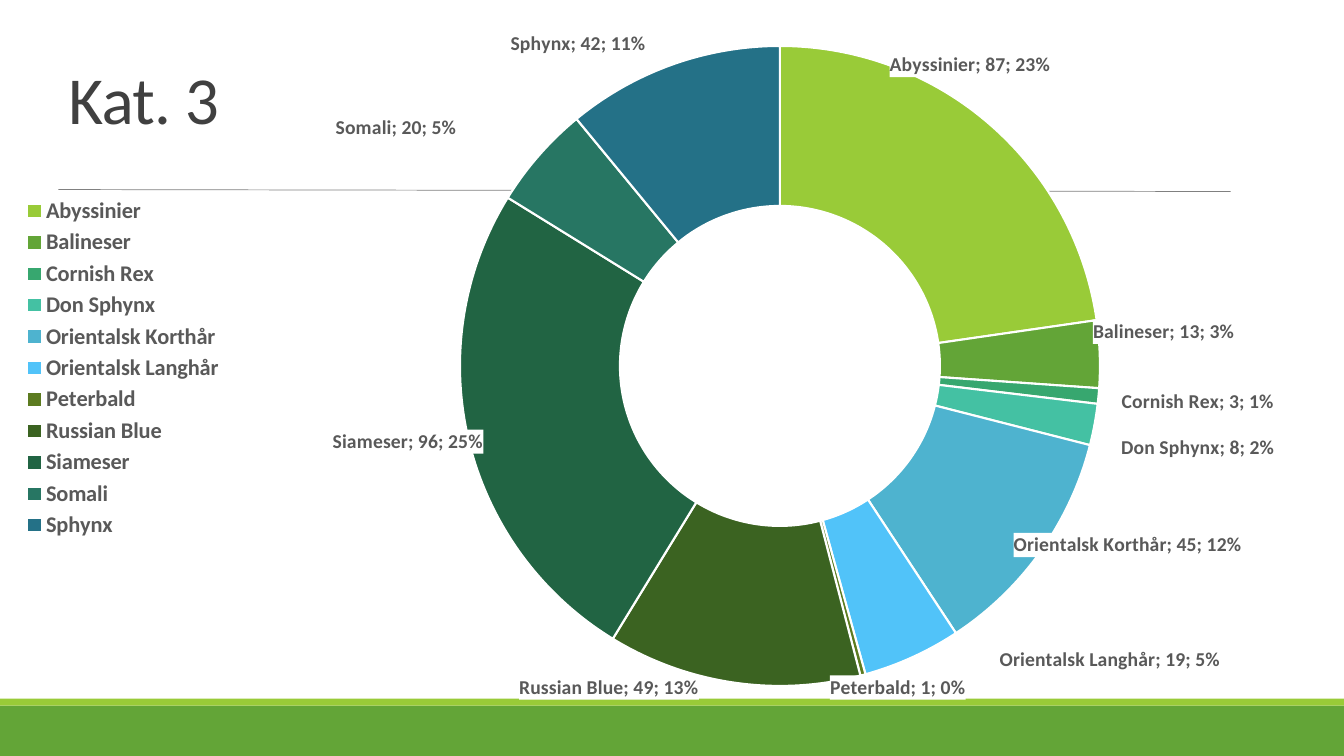
from math import cos, pi, sin

from pptx import Presentation
from pptx.chart.data import CategoryChartData
from pptx.dml.color import RGBColor
from pptx.enum.chart import XL_CHART_TYPE as ChartType, XL_LEGEND_POSITION as LegendPosition
from pptx.enum.shapes import MSO_CONNECTOR as Connector, MSO_SHAPE as Shape
from pptx.enum.text import MSO_ANCHOR as Anchor
from pptx.oxml import parse_xml
from pptx.oxml.ns import nsdecls, qn
from pptx.util import Pt

BREEDS = [
    ("Abyssinier", 87, "99CB38", (693, 46.4)),
    ("Balineser", 13, "63A537", (831.4, 237)),
    ("Cornish Rex", 3, "37A76F", (855.7, 287)),
    ("Don Sphynx", 8, "44C1A3", (855.7, 320)),
    ("Orientalsk Korthår", 45, "4EB3CF", (805.7, 389.3)),
    ("Orientalsk Langhår", 19, "51C3F9", (793, 471.4)),
    ("Peterbald", 1, "5C7B20", (641.4, 492)),
    ("Russian Blue", 49, "3B6321", (435, 492)),
    ("Siameser", 96, "216443", (291.4, 315.5)),
    ("Somali", 20, "277663", (283, 91.4)),
    ("Sphynx", 42, "247187", (413, 31.4)),
]
CHART_BOX = (4.3, 22.3, 955.4, 477.4)
RING_CENTER = (557.2, 261.4)
RING_RADIUS = 228.6
LEGEND_BOX = (13, 138, 150, 250)

LABEL_STYLE = """
<c:spPr><a:solidFill><a:srgbClr val="FFFFFF"/></a:solidFill><a:ln><a:noFill/></a:ln></c:spPr>
<c:txPr><a:bodyPr wrap="none" anchor="ctr"/><a:lstStyle/><a:p><a:pPr>
<a:defRPr sz="1400" b="1"><a:solidFill><a:srgbClr val="595959"/></a:solidFill>
<a:latin typeface="Calibri"/></a:defRPr></a:pPr><a:endParaRPr lang="da-DK"/></a:p></c:txPr>
<c:showLegendKey val="0"/><c:showVal val="1"/><c:showCatName val="1"/><c:showSerName val="0"/>
<c:showPercent val="1"/><c:showBubbleSize val="0"/><c:separator>; </c:separator>"""


def color(value):
    return RGBColor.from_string(value)


def label_xml(index, dx, dy):
    return (f'<c:dLbl><c:idx val="{index}"/><c:layout><c:manualLayout>'
            f'<c:x val="{dx:.4f}"/><c:y val="{dy:.4f}"/>'
            f'</c:manualLayout></c:layout>{LABEL_STYLE}</c:dLbl>')


def place(element, position, box, target=""):
    for layout in element.findall(qn("c:layout")):
        element.remove(layout)
    left, top, width, height = CHART_BOX
    x, y, w, h = box
    fractions = {"x": (x - left) / width, "y": (y - top) / height,
                 "w": w / width, "h": h / height}
    sizes = "".join(f'<c:{key} val="{part:.4f}"/>' for key, part in fractions.items())
    element.insert(position, parse_xml(
        f'<c:layout {nsdecls("c")}><c:manualLayout>{target}<c:xMode val="edge"/>'
        f'<c:yMode val="edge"/>{sizes}</c:manualLayout></c:layout>'))


class Painter:
    font = "Calibri"

    def __init__(self, page):
        self.page = page

    def bar(self, left, top, width, height, fill):
        shape = self.page.shapes.add_shape(
            Shape.RECTANGLE, Pt(left), Pt(top), Pt(width), Pt(height))
        shape.shadow.inherit = False
        shape.fill.solid()
        shape.fill.fore_color.rgb = color(fill)
        shape.line.fill.background()

    def rule(self, x1, y1, x2, y2, stroke, weight):
        line = self.page.shapes.add_connector(
            Connector.STRAIGHT, Pt(x1), Pt(y1), Pt(x2), Pt(y2))
        line.line.color.rgb = color(stroke)
        line.line.width = Pt(weight)
        line._element.spPr.append(parse_xml(f'<a:effectLst {nsdecls("a")}/>'))

    def title(self, text, left, top, width, height):
        box = self.page.shapes.add_textbox(Pt(left), Pt(top), Pt(width), Pt(height))
        frame = box.text_frame
        frame.word_wrap = True
        frame.vertical_anchor = Anchor.MIDDLE
        frame.text = text
        para = frame.paragraphs[0]
        para.line_spacing = 0.85
        span = para.runs[0]
        self.style(span.font, 48, "404040")
        span.font._element.set("spc", "-50")

    def style(self, font, size, fill, bold=False):
        font.name = self.font
        font.size = Pt(size)
        font.bold = bold
        font.color.rgb = color(fill)

    def doughnut(self, breeds):
        data = CategoryChartData()
        data.categories = [name for name, *_ in breeds]
        data.add_series("Series 1", [count for _, count, *_ in breeds])
        chart = self.page.shapes.add_chart(
            ChartType.DOUGHNUT, *map(Pt, CHART_BOX), data).chart
        chart.has_title = False
        self.style(chart.font, 10, "000000")
        chart.has_legend = True
        legend = chart.legend
        legend.position = LegendPosition.LEFT
        legend.include_in_layout = False
        self.style(legend.font, 16, "595959", True)
        place(legend._element, 1, LEGEND_BOX)

        plot = chart.plots[0]
        plot.vary_by_categories = True
        ring = plot._element
        ring.find(qn("c:holeSize")).set("val", "35")
        x, y = RING_CENTER
        place(ring.getparent(), 0,
              (x - RING_RADIUS, y - RING_RADIUS, 2 * RING_RADIUS, 2 * RING_RADIUS),
              '<c:layoutTarget val="inner"/>')
        series = plot.series[0]
        for index, (_, _, fill, _) in enumerate(breeds):
            slice_format = series.points[index].format
            slice_format.fill.solid()
            slice_format.fill.fore_color.rgb = color(fill)
            slice_format.line.color.rgb = color("FFFFFF")
            slice_format.line.width = Pt(1.5)
        self.labels(series, breeds)

    def labels(self, series, breeds):
        total = sum(count for _, count, *_ in breeds)
        middle = 0.75 * RING_RADIUS
        passed = 0
        labels = ""
        for index, (_, count, _, (x, y)) in enumerate(breeds):
            angle = 2 * pi * (passed + count / 2) / total
            passed += count
            dx = x - RING_CENTER[0] - middle * sin(angle)
            dy = y - RING_CENTER[1] + middle * cos(angle)
            labels += label_xml(index, dx / CHART_BOX[2], dy / CHART_BOX[3])
        series._element.find(qn("c:cat")).addprevious(parse_xml(
            f'<c:dLbls {nsdecls("c", "a")}>{labels}{LABEL_STYLE}'
            f'<c:showLeaderLines val="0"/></c:dLbls>'))


def main():
    deck = Presentation()
    deck.slide_width, deck.slide_height = Pt(960), Pt(540)
    page = deck.slides.add_slide(deck.slide_layouts[6])
    painter = Painter(page)
    painter.bar(0, 504, 960, 36, "63A537")
    painter.bar(0, 499, 960, 5, "99CB38")
    painter.rule(41.8, 135.4, 879, 136.8, "808080", 0.5)
    painter.title("Kat. 3", 41.8, 22.3, 836.6, 104.4)
    painter.doughnut(BREEDS)
    deck.save("out.pptx")


if __name__ == "__main__":
    main()
